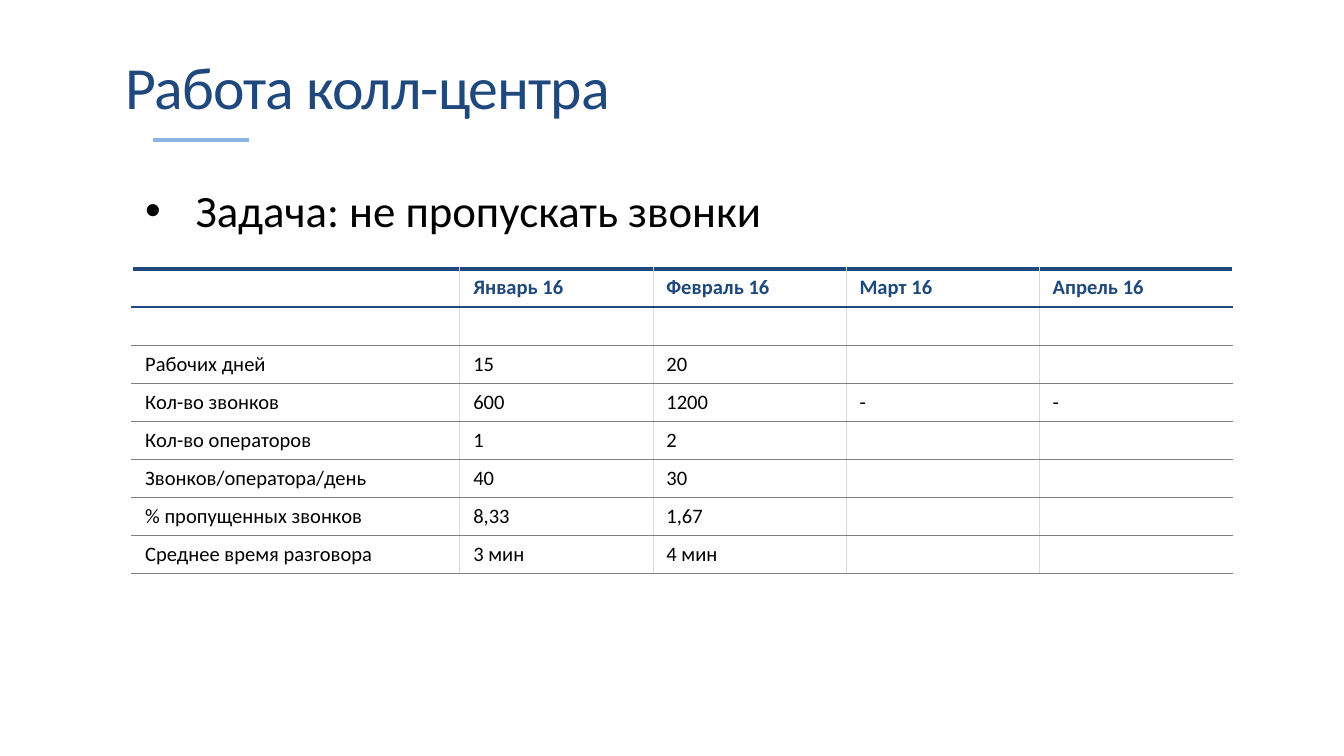
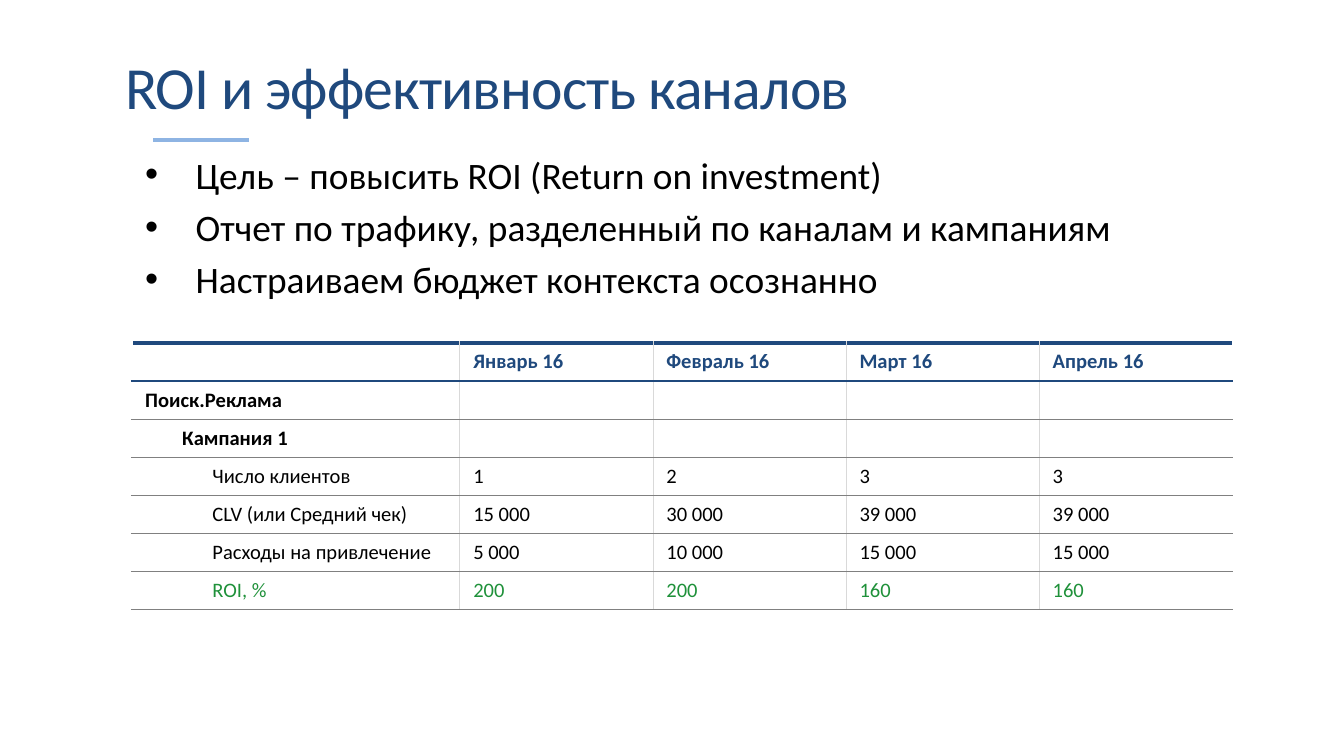
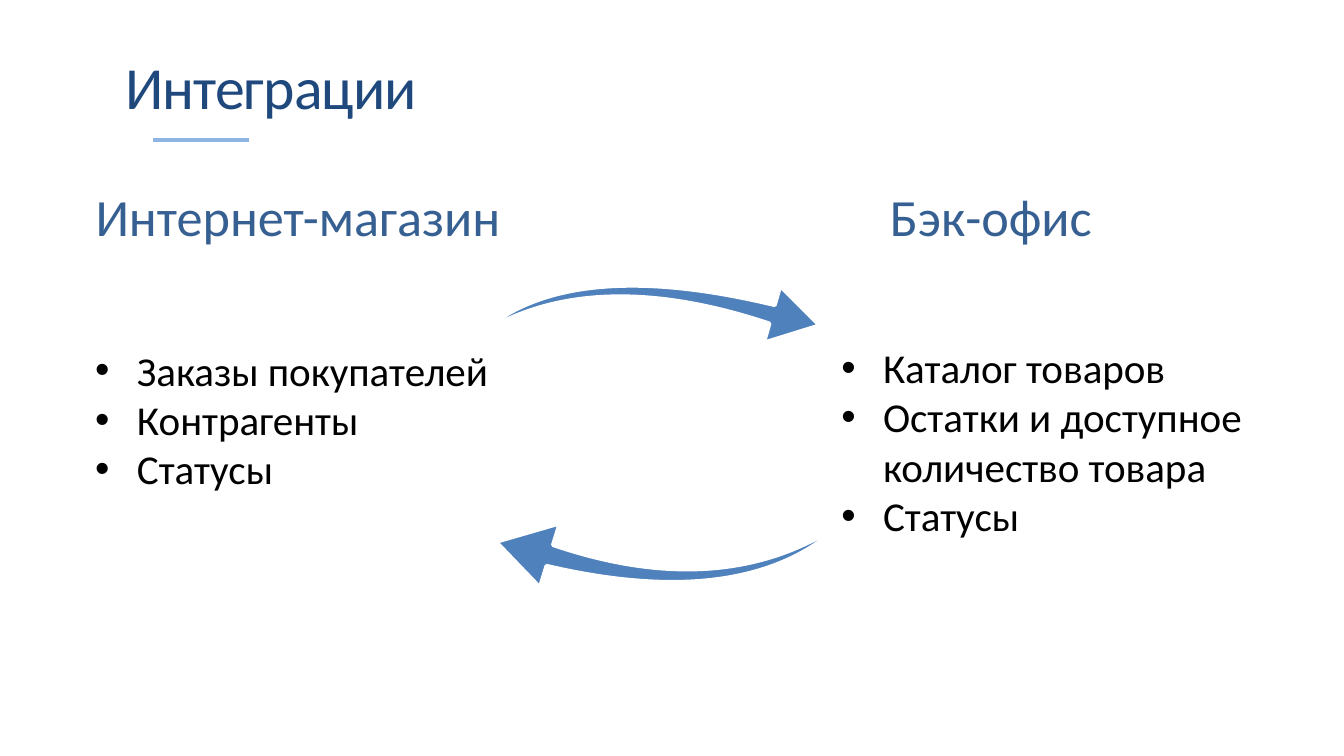
from dataclasses import dataclass

from lxml import etree
from pptx import Presentation
from pptx.dml.color import RGBColor
from pptx.enum.shapes import MSO_CONNECTOR, MSO_SHAPE
from pptx.enum.text import MSO_ANCHOR, MSO_AUTO_SIZE, PP_ALIGN
from pptx.oxml.ns import qn
from pptx.util import Cm, Pt

LEFT, CENTER = PP_ALIGN.LEFT, PP_ALIGN.CENTER
MIDDLE = MSO_ANCHOR.MIDDLE
NO_FIT, GROW = MSO_AUTO_SIZE.NONE, MSO_AUTO_SIZE.SHAPE_TO_FIT_TEXT
STRAIGHT, SWOOSH = MSO_CONNECTOR.STRAIGHT, MSO_SHAPE.SWOOSH_ARROW
TITLE_BODY, TITLE_ONLY = 1, 5


@dataclass(frozen=True)
class Theme:
    font: str = "Calibri"
    navy: str = "1F497D"
    steel: str = "376092"
    blue: str = "4F81BD"
    sky: str = "8EB4E3"
    green: str = "1F913A"
    black: str = "000000"
    white: str = "FFFFFF"
    grey: str = "808080"
    pale: str = "D9D9D9"
    title: int = 32
    head: int = 28
    lead: int = 24
    note: int = 22
    body: int = 20
    cell: int = 11


T = Theme()

# Table grid, in cm
LABEL_W, MONTH_W, ROW_H = 6.2, 3.65, 0.72
MONTHS = ["Январь 16", "Февраль 16", "Март 16", "Апрель 16"]

# Row styles: indent in cm, bold, colour
PLAIN = (0, False, T.black)
GROUP = (0, True, T.black)
CAMPAIGN = (0.7, True, T.black)
METRIC = (1.27, False, T.black)
RESULT = (1.27, False, T.green)
HEADER = (0, True, T.navy)

CALLS = [
    ("", [], PLAIN),
    ("Рабочих дней", ["15", "20"], PLAIN),
    ("Кол-во звонков", ["600", "1200", "-", "-"], PLAIN),
    ("Кол-во операторов", ["1", "2"], PLAIN),
    ("Звонков/оператора/день", ["40", "30"], PLAIN),
    ("% пропущенных звонков", ["8,33", "1,67"], PLAIN),
    ("Среднее время разговора", ["3 мин", "4 мин"], PLAIN),
]
CHANNELS = [
    ("Поиск.Реклама", [], GROUP),
    ("Кампания 1", [], CAMPAIGN),
    ("Число клиентов", ["1", "2", "3", "3"], METRIC),
    ("CLV (или Средний чек)", ["15 000", "30 000", "39 000", "39 000"], METRIC),
    ("Расходы на привлечение", ["5 000", "10 000", "15 000", "15 000"], METRIC),
    ("ROI, %", ["200", "200", "160", "160"], RESULT),
]


def rgb(code):
    return RGBColor.from_string(code)


def place(shape, left, top, width, height):
    shape.left, shape.top = Cm(left), Cm(top)
    shape.width, shape.height = Cm(width), Cm(height)


def style(par, size, color, bold=False):
    font = par.font
    font.name, font.size, font.bold = T.font, Pt(size), bold
    font.color.rgb = rgb(color)


def indent(par, left, first=0):
    props = par._p.get_or_add_pPr()
    props.set("marL", str(Cm(left)))
    props.set("indent", str(Cm(first)))
    return props


def fill_lines(frame, lines):
    frame.text = "\n".join(lines)
    frame.word_wrap = True
    return frame.paragraphs


# Slide parts
def new_slide(deck, layout, title):
    slide = deck.slides.add_slide(deck.slide_layouts[layout])
    rule = slide.shapes.add_connector(STRAIGHT, Cm(2.9), Cm(2.64), Cm(4.7), Cm(2.64))
    rule.line.color.rgb, rule.line.width = rgb(T.sky), Pt(2.25)
    etree.SubElement(rule._element.spPr, qn("a:effectLst"))

    head = slide.shapes.title
    place(head, 2.11, 0.58, 21.21, 2.08)
    par = fill_lines(head.text_frame, [title])[0]
    head.text_frame.auto_size = NO_FIT
    head.text_frame.vertical_anchor = MIDDLE
    par.alignment = LEFT
    style(par, T.title, T.navy)
    par._p.pPr.find(qn("a:defRPr")).set("spc", "-50")
    return slide


def add_body(slide, top, size, lines):
    body = slide.placeholders[1]
    place(body, 2.49, top, 20.8, 9.07)
    pars = fill_lines(body.text_frame, lines)
    body.text_frame.auto_size = NO_FIT
    pars[0].space_before = Pt(0)
    for par in pars:
        style(par, size, T.black)


def add_box(slide, box, lines):
    shape = slide.shapes.add_textbox(*map(Cm, box))
    pars = fill_lines(shape.text_frame, lines)
    shape.text_frame.auto_size = GROW
    return pars


def add_head(slide, box, text):
    par = add_box(slide, box, [text])[0]
    par.alignment = CENTER
    style(par, T.head, T.steel)


def add_list(slide, box, lines):
    for par in add_box(slide, box, lines):
        props = indent(par, 0.79, -0.79)
        etree.SubElement(props, qn("a:buFont"), typeface="Arial")
        etree.SubElement(props, qn("a:buChar"), char="•")
        style(par, T.note, T.black)


def add_swoosh(slide, box, turn, bends):
    arrow = slide.shapes.add_shape(SWOOSH, *map(Cm, box))
    arrow.rotation = turn
    arrow.adjustments[0], arrow.adjustments[1] = bends
    arrow.shadow.inherit = False
    arrow.fill.solid()
    arrow.fill.fore_color.rgb = rgb(T.blue)
    arrow.line.color.rgb, arrow.line.width = rgb(T.white), Pt(2)


# Table
def set_edge(cell, side, color, width):
    props = cell._tc.get_or_add_tcPr()
    line = etree.SubElement(props, qn(f"a:ln{side}"), w=str(Pt(width)))
    solid = etree.SubElement(line, qn("a:solidFill"))
    etree.SubElement(solid, qn("a:srgbClr"), val=color)


def set_edges(cell, row, col, last):
    outer, inner = (T.white, 1), (T.pale, 0.5)
    levels = [(T.navy, 2.25), (T.navy, 1.5)]
    thin = (T.grey, 0.5)
    set_edge(cell, "L", *(outer if col == 0 else inner))
    set_edge(cell, "R", *(outer if col == last else inner))
    set_edge(cell, "T", *(levels[row] if row < 2 else thin))
    set_edge(cell, "B", *(levels[1] if row == 0 else thin))


def set_cell(cell, text, shift, bold, color):
    cell.text = text
    cell.vertical_anchor = MIDDLE
    cell.margin_top = cell.margin_bottom = Cm(0.1)
    par = cell.text_frame.paragraphs[0]
    if shift:
        par.level = 1
        indent(par, shift)
    style(par, T.cell, color, bold)
    if not text:
        etree.SubElement(par._p, qn("a:endParaRPr"), sz=str(T.cell * 100))


def add_grid(slide, top, rows):
    rows = [("", MONTHS, HEADER)] + rows
    last = len(MONTHS)
    width = LABEL_W + last * MONTH_W
    box = map(Cm, (2.49, top, width, ROW_H * len(rows)))
    table = slide.shapes.add_table(len(rows), last + 1, *box).table
    table.first_row = table.horz_banding = False
    for col, column in enumerate(table.columns):
        column.width = Cm(MONTH_W if col else LABEL_W)
    for r, (label, values, (shift, bold, color)) in enumerate(rows):
        table.rows[r].height = Cm(ROW_H)
        texts = [label] + values + [""] * (last - len(values))
        for c, text in enumerate(texts):
            cell = table.cell(r, c)
            set_cell(cell, text, 0 if c else shift, bold, color)
            set_edges(cell, r, c, last)
            cell.fill.background()


def main():
    deck = Presentation()
    deck.slide_width, deck.slide_height = Cm(25.4), Cm(14.29)

    # Call centre
    slide = new_slide(deck, TITLE_BODY, "Работа колл-центра")
    add_body(slide, 3.33, T.lead, ["Задача: не пропускать звонки"])
    add_grid(slide, 5.08, CALLS)

    # Channels
    slide = new_slide(deck, TITLE_BODY, "ROI и эффективность каналов")
    add_body(slide, 2.74, T.body, [
        "Цель – повысить ROI (Return on investment)",
        "Отчет по трафику, разделенный по каналам и кампаниям",
        "Настраиваем бюджет контекста осознанно",
    ])
    add_grid(slide, 6.48, CHANNELS)

    # Data exchange
    slide = new_slide(deck, TITLE_ONLY, "Интеграции")
    add_list(slide, (1.55, 6.4, 8.15, 3.07),
             ["Заказы покупателей", "Контрагенты", "Статусы"])
    add_list(slide, (15.65, 6.35, 9.07, 4.01),
             ["Каталог товаров", "Остатки и доступное количество товара", "Статусы"])
    add_head(slide, (1.17, 3.35, 8.92, 1.45), "Интернет-магазин")
    add_head(slide, (14.66, 3.35, 8.13, 1.45), "Бэк-офис")
    add_swoosh(slide, (9.45, 4.55, 5.84, 2.97), 22.5, (0.12, 0.31))
    add_swoosh(slide, (9.63, 8.59, 5.84, 3.38), 203.6, (0.12, 0.31))

    deck.save("out.pptx")


if __name__ == "__main__":
    main()
